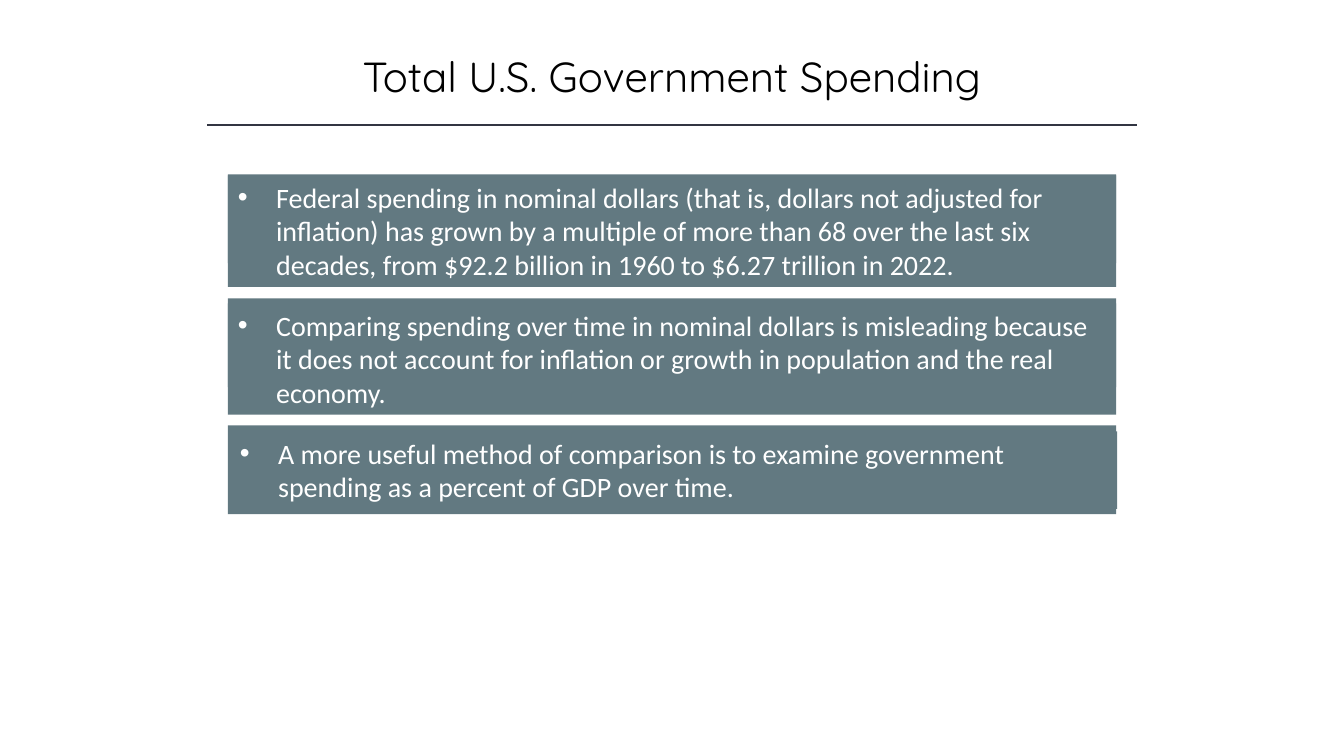
"""Build a slide with a ruled title and three bulleted bands on government spending."""
from dataclasses import dataclass

from lxml import etree
from pptx import Presentation, util as u
from pptx.dml.color import RGBColor
from pptx.enum import shapes, text
from pptx.oxml import ns

TITLE = "Total U.S. Government Spending"
POINTS = [
    {"top": 1.73, "inset": (0, 0.01), "lines": 3,
     "text": "Federal spending in nominal dollars (that is, dollars not adjusted for "
             "inflation) has grown by a multiple of more than 68 over the last six "
             "decades, from $92.2 billion in 1960 to $6.27 trillion in 2022."},
    {"top": 2.96, "inset": (0, 0.05), "lines": 3,
     "text": "Comparing spending over time in nominal dollars is misleading because it "
             "does not account for inflation or growth in population and the real economy."},
    {"top": 4.22, "inset": (0.02, 0.06), "lines": 2,
     "text": "A more useful method of comparison is to examine government spending "
             "as a percent of GDP over time."},
]


@dataclass(frozen=True)
class Theme:
    band: str = "627981"
    rule: str = "323542"
    title: str = "000000"
    body: str = "FFFFFF"
    title_font: str = "Quicksand"
    body_font: str = "Calibri"
    title_size: int = 30
    body_size: int = 20


THEME = Theme()
WIDTH, HEIGHT = 13.33, 7.5
TITLE_W, RULE_W, BAND_W = 9.61, 9.22, 8.81
TITLE_TOP, TITLE_H, RULE_Y = 0.45, 0.61, 1.24
BAND_H, LINE_H, PADDING, INDENT = 0.88, 0.335, 0.1, 0.38


def centred(width):
    return (WIDTH - width) / 2


def inches(*lengths):
    return [u.Inches(n) for n in lengths]


def write(sp, words, font, size, color, align):
    tf = sp.text_frame
    frame = {"word_wrap": True, "auto_size": text.MSO_AUTO_SIZE.SHAPE_TO_FIT_TEXT,
             "vertical_anchor": text.MSO_ANCHOR.TOP}
    for name, value in frame.items():
        setattr(tf, name, value)
    p = tf.paragraphs[0]
    p.alignment = align
    r = p.add_run()
    r.text = words
    for name, value in {"name": font, "size": u.Pt(size), "bold": False}.items():
        setattr(r.font, name, value)
    r.font.color.rgb = RGBColor.from_string(color)
    return p


def add_band(s, left, top, width, height):
    sp = s.shapes.add_shape(shapes.MSO_SHAPE.RECTANGLE, *inches(left, top, width, height))
    sp.shadow.inherit = False
    sp.fill.solid()
    sp.fill.fore_color.rgb = RGBColor.from_string(THEME.band)
    sp.line.fill.background()
    return sp


def add_bullet(p):
    props = p._p.get_or_add_pPr()
    props.set("marL", str(u.Inches(INDENT)))
    props.set("indent", str(-u.Inches(INDENT)))
    etree.SubElement(props, ns.qn("a:buFont"), typeface="Arial")
    etree.SubElement(props, ns.qn("a:buChar"), char="•")


def add_title(s):
    sp = s.shapes.title
    sp.left, sp.top, sp.width, sp.height = inches(centred(TITLE_W), TITLE_TOP, TITLE_W, TITLE_H)
    p = write(sp, TITLE, THEME.title_font, THEME.title_size, THEME.title, text.PP_ALIGN.CENTER)
    p.line_spacing = 1.0
    x = centred(RULE_W)
    rule = s.shapes.add_connector(shapes.MSO_CONNECTOR.STRAIGHT,
                                  *inches(x, RULE_Y, x + RULE_W, RULE_Y))
    rule.line.color.rgb = RGBColor.from_string(THEME.rule)
    rule.line.width = u.Pt(1)
    etree.SubElement(rule._element.spPr, ns.qn("a:effectLst"))


def add_point(s, point):
    left, top = centred(BAND_W), point["top"]
    dx, dy = point["inset"]
    add_band(s, left, top, BAND_W, BAND_H)
    sp = add_band(s, left + dx, top + dy, BAND_W - dx / 2, point["lines"] * LINE_H + PADDING)
    add_bullet(write(sp, point["text"], THEME.body_font, THEME.body_size, THEME.body,
                     text.PP_ALIGN.LEFT))


def main():
    prs = Presentation()
    prs.slide_width, prs.slide_height = inches(WIDTH, HEIGHT)
    s = prs.slides.add_slide(prs.slide_layouts[5])
    add_title(s)
    for point in POINTS:
        add_point(s, point)
    prs.save("out.pptx")


if __name__ == "__main__":
    main()
